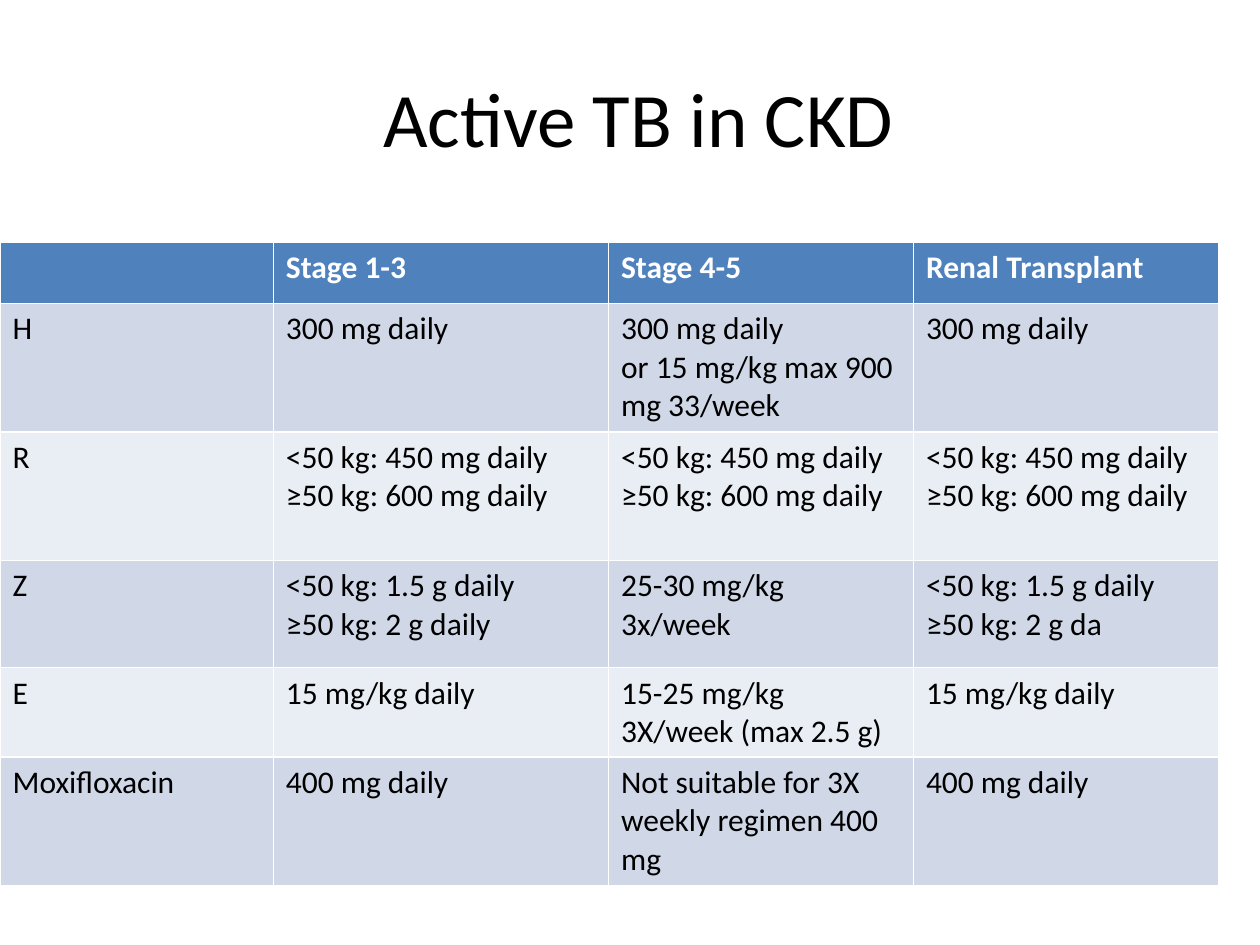
from dataclasses import dataclass

from pptx import Presentation
from pptx.dml.color import RGBColor
from pptx.enum.text import MSO_ANCHOR, PP_ALIGN
from pptx.util import Inches, Pt


@dataclass(frozen=True)
class Theme:
    font: str = "Calibri"
    title_size: int = 44
    table_size: int = 18
    text: str = "000000"
    header_text: str = "FFFFFF"
    header_fill: str = "4F81BD"
    bands: tuple = ("D0D8E8", "E9EDF4")


THEME = Theme()
TITLE_BOX = (0.5, 0.3, 9, 1.25)
TABLE_BOX = (0, 1.92, 9.67, 5.11)
COLUMN_WIDTHS = (2.17, 2.66, 2.42, 2.42)
ROW_HEIGHTS = (0.49, 1.02, 1.02, 0.85, 0.71, 1.02)

RIFAMPICIN_DOSE = "<50 kg: 450 mg daily\n≥50 kg: 600 mg daily"
DOSES = (
    ("", "Stage 1-3", "Stage 4-5", "Renal Transplant"),
    ("H", "300 mg daily", "300 mg daily\nor 15 mg/kg max 900 mg 33/week", "300 mg daily"),
    ("R", RIFAMPICIN_DOSE, RIFAMPICIN_DOSE, RIFAMPICIN_DOSE),
    ("Z", "<50 kg: 1.5 g daily\n≥50 kg: 2 g daily", "25-30 mg/kg 3x/week",
     "<50 kg: 1.5 g daily\n≥50 kg: 2 g da"),
    ("E", "15 mg/kg daily", "15-25 mg/kg 3X/week (max 2.5 g)", "15 mg/kg daily"),
    ("Moxifloxacin", "400 mg daily", "Not suitable for 3X weekly regimen 400 mg",
     "400 mg daily"),
)


def format_text(frame, size, color, bold=False):
    for para in frame.paragraphs:
        para.font.size = Pt(size)
        for span in para.runs:
            span.font.name = THEME.font
            span.font.size = Pt(size)
            span.font.bold = bold
            span.font.color.rgb = RGBColor.from_string(color)


def place_title(slide, box, text):
    title = slide.shapes.title
    title.left, title.top, title.width, title.height = map(Inches, box)
    frame = title.text_frame
    frame.text = text
    frame.vertical_anchor = MSO_ANCHOR.MIDDLE
    frame.paragraphs[0].alignment = PP_ALIGN.CENTER
    format_text(frame, THEME.title_size, THEME.text)


def place_dose_table(slide, box, rows):
    table = slide.shapes.add_table(len(rows), len(rows[0]), *map(Inches, box)).table
    for column, width in zip(table.columns, COLUMN_WIDTHS):
        column.width = Inches(width)
    for row, height in zip(table.rows, ROW_HEIGHTS):
        row.height = Inches(height)
    for row_index, row in enumerate(rows):
        is_header = row_index == 0
        fill = THEME.header_fill if is_header else THEME.bands[(row_index - 1) % 2]
        color = THEME.header_text if is_header else THEME.text
        for column_index, text in enumerate(row):
            cell = table.cell(row_index, column_index)
            cell.fill.solid()
            cell.fill.fore_color.rgb = RGBColor.from_string(fill)
            cell.text_frame.text = text
            format_text(cell.text_frame, THEME.table_size, color, is_header)


def main():
    deck = Presentation()
    deck.slide_width, deck.slide_height = Inches(10), Inches(7.5)
    slide = deck.slides.add_slide(deck.slide_layouts.get_by_name("Title Only"))
    place_title(slide, TITLE_BOX, " Active TB in CKD")
    place_dose_table(slide, TABLE_BOX, DOSES)
    deck.save("out.pptx")


if __name__ == "__main__":
    main()
